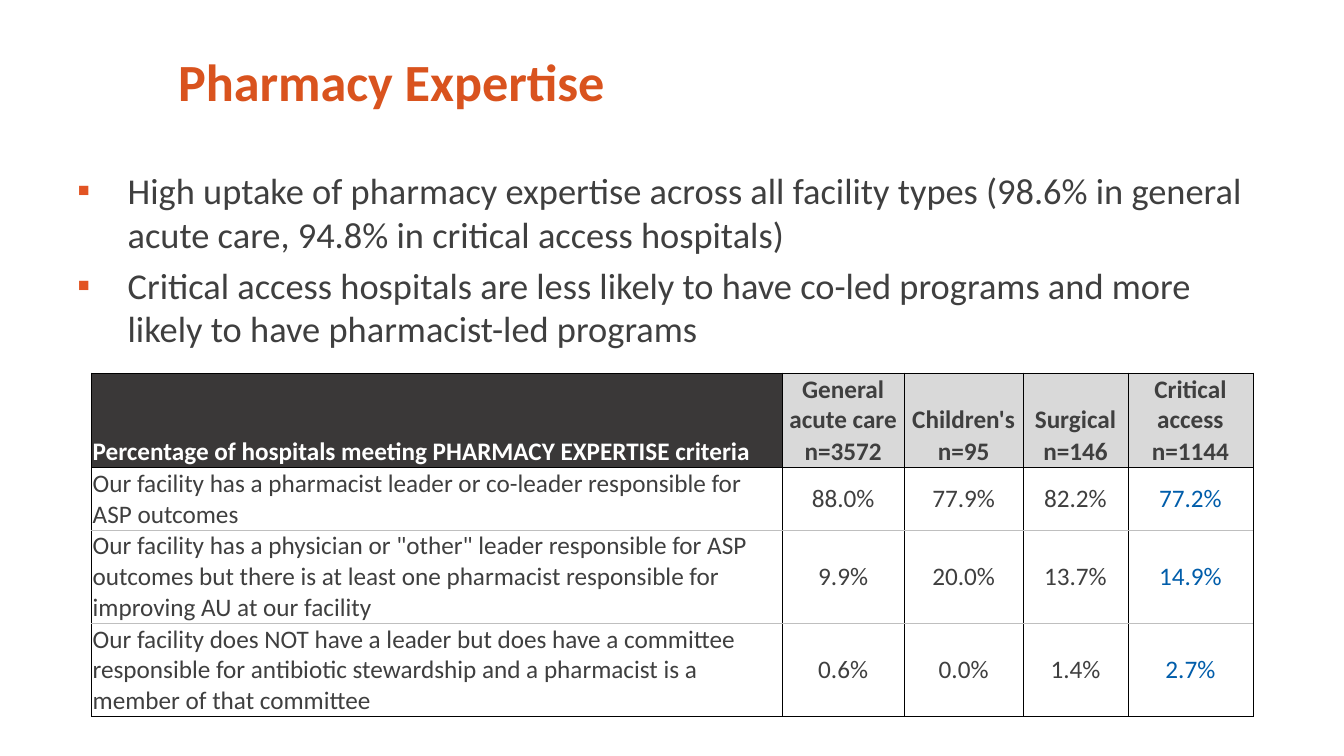
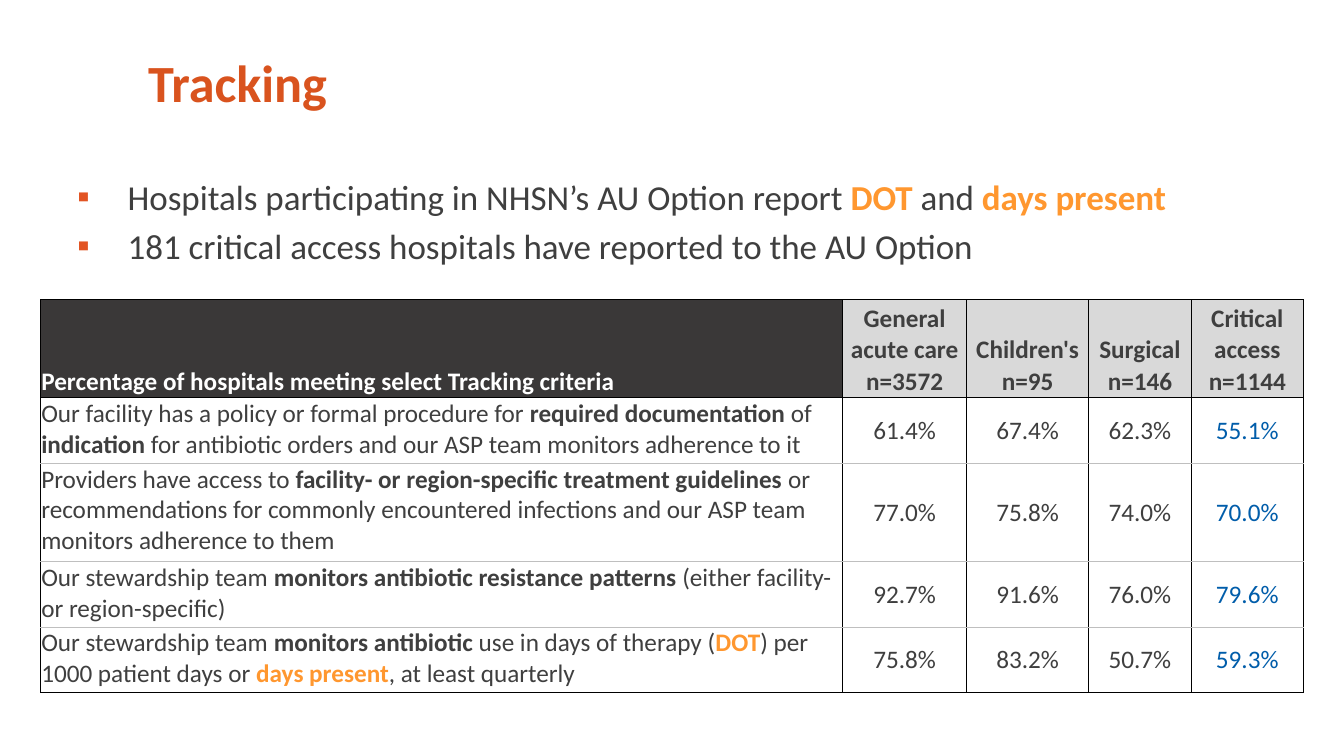
"""Build two slides on hospital antibiotic stewardship: pharmacy expertise and tracking."""
from dataclasses import dataclass
from typing import Optional

from lxml.etree import SubElement
from pptx import Presentation
from pptx.dml.color import RGBColor
from pptx.enum.text import MSO_ANCHOR, MSO_AUTO_SIZE, PP_ALIGN
from pptx.oxml.ns import qn
from pptx.util import Inches, Pt

SLIDE_WIDTH, SLIDE_HEIGHT = Inches(40) // 3, Inches(7.5)
GRID_COLUMNS, GRID_ROWS = 40, 30

FONT = "Calibri"
TITLE_COLOR = RGBColor(0xD9, 0x53, 0x1E)
BULLET_COLOR = RGBColor(0xE2, 0x54, 0x23)
TEXT_COLOR = RGBColor(0x3F, 0x3F, 0x3F)
ACCENT = RGBColor(0xFF, 0x97, 0x2F)
BLUE = RGBColor(0x00, 0x5D, 0xAA)
BLACK = RGBColor(0x00, 0x00, 0x00)
WHITE = RGBColor(0xFF, 0xFF, 0xFF)
RULE_GREY = RGBColor(0xBF, 0xBF, 0xBF)
HEADER_DARK = RGBColor(0x3A, 0x38, 0x38)
HEADER_LIGHT = RGBColor(0xD9, 0xD9, 0xD9)

TITLE_SIZE, TABLE_SIZE = 37.3, 18
HEADER_ROWS = 2
HOSPITAL_TYPES = [
    ("General acute care", "n=3572"),
    ("Children's", "n=95"),
    ("Surgical", "n=146"),
    ("Critical access", "n=1144"),
]


@dataclass(frozen=True)
class Span:
    text: str
    bold: bool = False
    color: RGBColor = TEXT_COLOR


@dataclass(frozen=True)
class Box:
    left: float
    top: float
    width: float
    height: float


@dataclass(frozen=True)
class Criterion:
    spans: list[Span]
    lines: int
    rates: list[str]


@dataclass(frozen=True)
class CriteriaTable:
    left: float
    top: float
    column_widths: list[float]
    line_height: float
    heading: str
    criteria: list[Criterion]


@dataclass(frozen=True)
class Topic:
    title: str
    title_box: Box
    body_box: Box
    body_size: float
    bullets: list[list[Span]]
    table: CriteriaTable


DOT = Span("DOT", True, ACCENT)
DAYS_PRESENT = Span("days present", True, ACCENT)

TOPICS = [
    Topic(
        "Pharmacy Expertise", Box(5, 1.72, 17.76, 2.92), Box(2, 6.48, 36, 8.6), 26,
        [
            [Span("High uptake of pharmacy expertise across all facility types "
                  "(98.6% in general acute care, 94.8% in critical access hospitals)")],
            [Span("Critical access hospitals are less likely to have co-led programs "
                  "and more likely to have pharmacist-led programs")],
        ],
        CriteriaTable(
            2.73, 14.8, [20.55, 3.63, 3.54, 3.12, 3.72], 1.22,
            "Percentage of hospitals meeting PHARMACY EXPERTISE criteria",
            [
                Criterion([Span("Our facility has a pharmacist leader or co-leader "
                                "responsible for ASP outcomes")],
                          2, ["88.0%", "77.9%", "82.2%", "77.2%"]),
                Criterion([Span('Our facility has a physician or "other" leader responsible '
                                "for ASP outcomes but there is at least one pharmacist "
                                "responsible for improving AU at our facility")],
                          3, ["9.9%", "20.0%", "13.7%", "14.9%"]),
                Criterion([Span("Our facility does NOT have a leader but does have a committee "
                                "responsible for antibiotic stewardship and a pharmacist is a "
                                "member of that committee")],
                          3, ["0.6%", "0.0%", "1.4%", "2.7%"]),
            ],
        ),
    ),
    Topic(
        "Tracking", Box(4.11, 1.04, 33.9, 3.64), Box(2, 6.76, 36, 6.52), 25,
        [
            [Span("Hospitals participating in NHSN’s AU Option report "), DOT,
             Span(" and "), DAYS_PRESENT],
            [Span("181 critical access hospitals have reported to the AU Option")],
        ],
        CriteriaTable(
            1.2, 11.88, [23.88, 3.69, 3.63, 3.06, 3.33], 1.3,
            "Percentage of hospitals meeting select Tracking criteria",
            [
                Criterion([Span("Our facility has a policy or formal procedure for "),
                           Span("required documentation ", True), Span("of "),
                           Span("indication", True),
                           Span(" for antibiotic orders and our ASP team monitors "
                                "adherence to it")],
                          2, ["61.4%", "67.4%", "62.3%", "55.1%"]),
                Criterion([Span("Providers have access to "),
                           Span("facility- or region-specific treatment guidelines ", True),
                           Span("or recommendations for commonly encountered infections and "
                                "our ASP team monitors adherence to them")],
                          3, ["77.0%", "75.8%", "74.0%", "70.0%"]),
                Criterion([Span("Our stewardship team "),
                           Span("monitors antibiotic resistance patterns ", True),
                           Span("(either facility- or region-specific)")],
                          2, ["92.7%", "91.6%", "76.0%", "79.6%"]),
                Criterion([Span("Our stewardship team "), Span("monitors antibiotic ", True),
                           Span("use in days of therapy ("), DOT,
                           Span(") per 1000 patient days or "), DAYS_PRESENT,
                           Span(", at least quarterly")],
                          2, ["75.8%", "83.2%", "50.7%", "59.3%"]),
            ],
        ),
    ),
]


def across(columns: float) -> int:
    return round(SLIDE_WIDTH * columns / GRID_COLUMNS)


def down(rows: float) -> int:
    return round(SLIDE_HEIGHT * rows / GRID_ROWS)


def place(shape, box: Box) -> None:
    shape.left, shape.top = across(box.left), down(box.top)
    shape.width, shape.height = across(box.width), down(box.height)


def add_spans(paragraph, spans: list[Span], size: float) -> None:
    for span in spans:
        run = paragraph.add_run()
        run.text = span.text
        run.font.name = FONT
        run.font.size = Pt(size)
        run.font.bold = span.bold
        run.font.color.rgb = span.color


def add_bullet_mark(paragraph) -> None:
    properties = paragraph._p.get_or_add_pPr()
    properties.set("marL", str(Inches(0.5)))
    properties.set("indent", str(-Inches(0.5)))
    color = SubElement(properties, qn("a:buClr"))
    SubElement(color, qn("a:srgbClr"), val=str(BULLET_COLOR))
    SubElement(properties, qn("a:buFont"), typeface=FONT)
    SubElement(properties, qn("a:buChar"), char="▪")


def fill_title(shape, topic: Topic) -> None:
    place(shape, topic.title_box)
    frame = shape.text_frame
    frame.auto_size = MSO_AUTO_SIZE.NONE
    frame.vertical_anchor = MSO_ANCHOR.BOTTOM
    paragraph = frame.paragraphs[0]
    paragraph.alignment = PP_ALIGN.LEFT
    paragraph.line_spacing = Pt(40)
    add_spans(paragraph, [Span(topic.title, True, TITLE_COLOR)], TITLE_SIZE)


def fill_body(shape, topic: Topic) -> None:
    place(shape, topic.body_box)
    frame = shape.text_frame
    frame.auto_size = MSO_AUTO_SIZE.NONE
    for index, spans in enumerate(topic.bullets):
        paragraph = frame.add_paragraph() if index else frame.paragraphs[0]
        add_bullet_mark(paragraph)
        paragraph.space_before = Pt(topic.body_size * 0.2 if index else 0)
        add_spans(paragraph, spans, topic.body_size)


def rule_color(line: int, row_count: int) -> Optional[RGBColor]:
    if line in (0, HEADER_ROWS, row_count):
        return BLACK
    return None if line < HEADER_ROWS else RULE_GREY


def add_borders(cell, top: Optional[RGBColor], bottom: Optional[RGBColor]) -> None:
    properties = cell._tc.get_or_add_tcPr()
    for side, color in (("L", BLACK), ("R", BLACK), ("T", top), ("B", bottom)):
        line = SubElement(properties, qn(f"a:ln{side}"), w=str(Pt(0.5)))
        if color is None:
            SubElement(line, qn("a:noFill"))
        else:
            fill = SubElement(line, qn("a:solidFill"))
            SubElement(fill, qn("a:srgbClr"), val=str(color))


def fill_cell(cell, spans: list[Span], fill: RGBColor, anchor: MSO_ANCHOR,
              alignment: PP_ALIGN) -> None:
    cell.fill.solid()
    cell.fill.fore_color.rgb = fill
    cell.margin_left = cell.margin_right = cell.margin_top = Inches(0.01)
    cell.margin_bottom = 0
    cell.vertical_anchor = anchor
    paragraph = cell.text_frame.paragraphs[0]
    paragraph.alignment = alignment
    add_spans(paragraph, spans, TABLE_SIZE)


def add_criteria_table(slide, content: CriteriaTable) -> None:
    line_counts = [2, 1] + [criterion.lines for criterion in content.criteria]
    row_count = len(line_counts)
    table = slide.shapes.add_table(
        row_count, len(content.column_widths), across(content.left), down(content.top),
        across(sum(content.column_widths)), down(sum(line_counts) * content.line_height),
    ).table
    table.first_row = table.horz_banding = False
    for column, width in zip(table.columns, content.column_widths):
        column.width = across(width)
    for row, lines in zip(table.rows, line_counts):
        row.height = down(lines * content.line_height)

    heading_cell = table.cell(0, 0)
    heading_cell.merge(table.cell(HEADER_ROWS - 1, 0))
    for row_index, row in enumerate(table.rows):
        for cell in row.cells:
            last_line = row_index + (HEADER_ROWS if cell.is_merge_origin else 1)
            add_borders(cell, rule_color(row_index, row_count), rule_color(last_line, row_count))

    fill_cell(heading_cell, [Span(content.heading, True, WHITE)], HEADER_DARK,
              MSO_ANCHOR.BOTTOM, PP_ALIGN.LEFT)
    for column_index, labels in enumerate(HOSPITAL_TYPES, start=1):
        for row_index, (label, anchor) in enumerate(
                zip(labels, (MSO_ANCHOR.BOTTOM, MSO_ANCHOR.MIDDLE))):
            fill_cell(table.cell(row_index, column_index), [Span(label, True)],
                      HEADER_LIGHT, anchor, PP_ALIGN.CENTER)
    for row_index, criterion in enumerate(content.criteria, start=HEADER_ROWS):
        fill_cell(table.cell(row_index, 0), criterion.spans, WHITE,
                  MSO_ANCHOR.TOP, PP_ALIGN.LEFT)
        for column_index, rate in enumerate(criterion.rates, start=1):
            color = BLUE if column_index == len(HOSPITAL_TYPES) else TEXT_COLOR
            fill_cell(table.cell(row_index, column_index), [Span(rate, color=color)], WHITE,
                      MSO_ANCHOR.MIDDLE, PP_ALIGN.CENTER)


def main() -> None:
    presentation = Presentation()
    presentation.slide_width, presentation.slide_height = SLIDE_WIDTH, SLIDE_HEIGHT
    for topic in TOPICS:
        slide = presentation.slides.add_slide(presentation.slide_layouts[1])
        fill_title(slide.shapes.title, topic)
        fill_body(slide.placeholders[1], topic)
        add_criteria_table(slide, topic.table)
    presentation.save("out.pptx")


if __name__ == "__main__":
    main()
